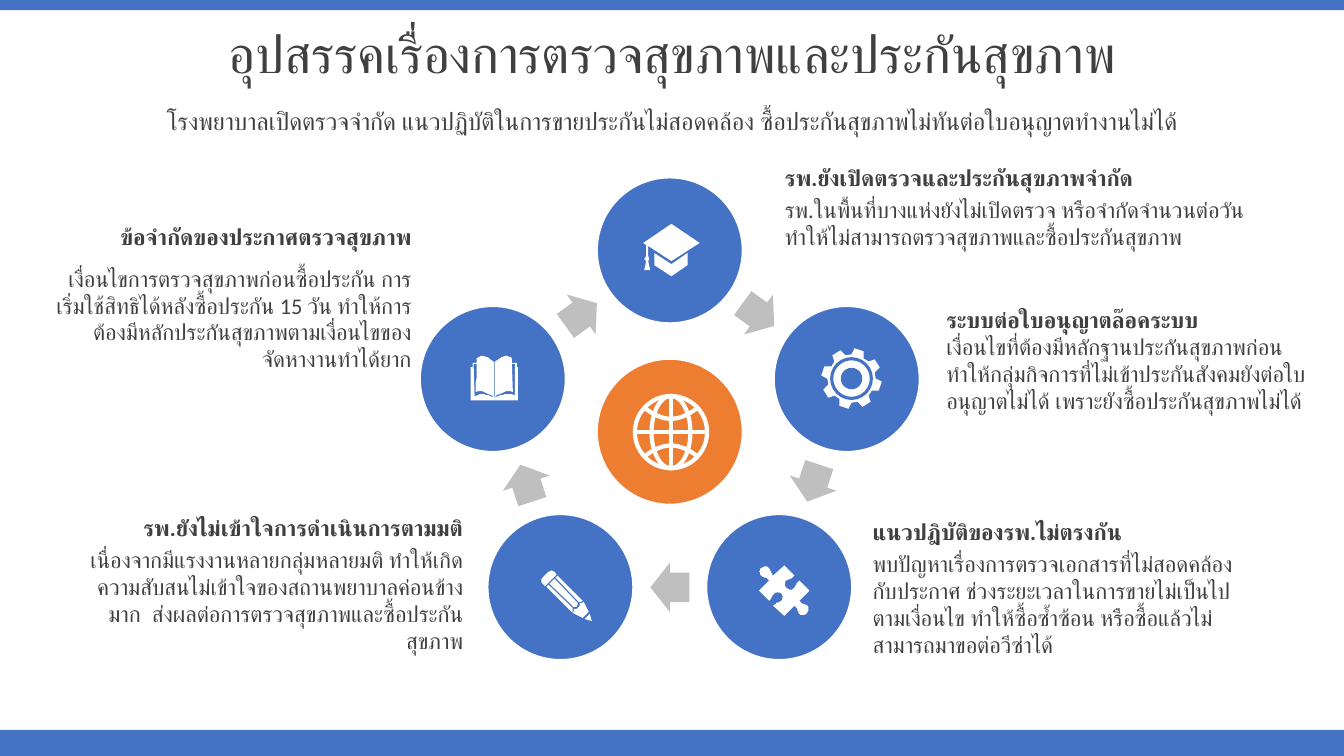
from dataclasses import dataclass
from math import cos, radians, sin

from lxml import etree
from pptx import Presentation
from pptx.dml.color import RGBColor
from pptx.enum.shapes import MSO_CONNECTOR, MSO_SHAPE
from pptx.enum.text import MSO_ANCHOR, MSO_AUTO_SIZE, PP_ALIGN
from pptx.oxml.ns import qn
from pptx.util import Cm, Pt

RECTANGLE, OVAL, ARROW = MSO_SHAPE.RECTANGLE, MSO_SHAPE.OVAL, MSO_SHAPE.RIGHT_ARROW
STRAIGHT = MSO_CONNECTOR.STRAIGHT
LEFT, CENTER, RIGHT = PP_ALIGN.LEFT, PP_ALIGN.CENTER, PP_ALIGN.RIGHT
TOP, MIDDLE = MSO_ANCHOR.TOP, MSO_ANCHOR.MIDDLE
NO_FIT = MSO_AUTO_SIZE.NONE
TITLE_ONLY = 5
WIDTH, HEIGHT = 33.87, 19.05
GRID = Cm(2.54) / 100  # one unit of the icon outlines


@dataclass(frozen=True)
class Theme:
    font: str = "Calibri"
    blue: RGBColor = RGBColor(0x44, 0x72, 0xC4)
    orange: RGBColor = RGBColor(0xED, 0x7D, 0x31)
    grey: RGBColor = RGBColor(0xBF, 0xBF, 0xBF)
    ink: RGBColor = RGBColor(0x40, 0x40, 0x40)
    white: RGBColor = RGBColor(0xFF, 0xFF, 0xFF)
    title: float = 37.2
    subtitle: float = 17.3
    body: float = 16


# Outlines: a pair is a corner, six numbers are a Bézier curve.
BOOK = [[
    (24, 41), (23, 41), (15, 38, 12, 37, 4, 40), (3, 8), (6, 8), (6, 17, 5, 27, 5, 36),
    (11, 34, 17, 36, 23, 41), (23, 6), (19, 3, 16, 0, 12, 0), (10, 0, 8, 1, 6, 2),
    (6, 3, 6, 5, 6, 7), (2, 7), (2, 11), (0, 11), (0, 44), (47, 44), (47, 11), (46, 11),
    (46, 7), (41, 7), (41, 5, 41, 3, 41, 2), (39, 1, 37, 0, 35, 0), (31, 0, 28, 3, 24, 6),
    (24, 41), (30, 36, 36, 34, 42, 36), (41, 8), (44, 8), (44, 39), (36, 36, 31, 39, 24, 41)]]
PUZZLE = [[
    (2, 3), (0, 4, 0, 7, 2, 10), (4, 13, 7, 11, 10, 15), (0, 25), (10, 35),
    (13, 33, 12, 30, 15, 28), (17, 26, 20, 26, 22, 28), (24, 29, 24, 33, 22, 35),
    (19, 38, 18, 36, 14, 40), (25, 50), (35, 40), (39, 43, 37, 44, 40, 48),
    (42, 50, 46, 49, 47, 48), (49, 46, 50, 43, 48, 40), (45, 37, 42, 39, 40, 35),
    (50, 25), (40, 15), (36, 17, 37, 20, 34, 23), (32, 25, 29, 24, 27, 22),
    (26, 21, 25, 17, 27, 15), (31, 12, 32, 14, 35, 10), (25, 0), (14, 10),
    (11, 7, 13, 6, 10, 3), (7, 0, 4, 1, 2, 3)]]
CAP = [
    [(44, 29), (28, 40), (11, 29), (11, 41), (28, 52), (44, 41)],
    [(28, 0), (0, 19), (3, 21), (3, 32), (1, 35), (3, 37), (1, 46), (7, 46), (5, 37),
     (6, 35), (5, 32), (5, 22), (28, 37), (56, 19)]]
PENCIL = [
    [(47, 43), (42, 48), (49, 50)],
    [(41, 31), (39, 32, 38, 33, 37, 32), (37, 34, 37, 35, 35, 37),
     (34, 38, 32, 38, 31, 38), (32, 39, 31, 40, 30, 42), (40, 47), (46, 41)],
    [(6, 14), (4, 16), (29, 41), (30, 40, 30, 37, 29, 36)],
    [(12, 8), (7, 13), (30, 35), (31, 37, 33, 37, 34, 35), (35, 34, 35, 32, 34, 31)],
    [(15, 5), (13, 7), (35, 30), (36, 31, 38, 31, 40, 30)],
    [(9, 0), (8, 0, 7, 1, 6, 1), (0, 7), (-1, 9, -1, 11, 0, 13), (1, 14, 2, 15, 3, 15),
     (14, 4), (12, 1), (11, 1, 10, 0, 9, 0)]]
ICONS = [(BOOK, 11.86, 8.97), (PUZZLE, 19.13, 14.25), (CAP, 16.21, 5.64), (PENCIL, 13.67, 14.38)]

# align, left, width, heading top, heading height, body top, body height, heading, body
CALLOUTS = [
    (RIGHT, 1.09, 9.53, 5.49, 1.22, 6.55, 4.09, "ข้อจำกัดของประกาศตรวจสุขภาพ",
     "เงื่อนไขการตรวจสุขภาพก่อนซื้อประกัน การเริ่มใช้สิทธิได้หลังซื้อประกัน 15 วัน "
     "ทำให้การต้องมีหลักประกันสุขภาพตามเงื่อนไขของจัดหางานทำได้ยาก"),
    (LEFT, 19.53, 12.52, 4.01, 1.22, 4.83, 2.16, "รพ.ยังเปิดตรวจและประกันสุขภาพจำกัด",
     "รพ.ในพื้นที่บางแห่งยังไม่เปิดตรวจ หรือจำกัดจำนวนต่อวัน "
     "ทำให้ไม่สามารถตรวจสุขภาพและซื้อประกันสุขภาพ"),
    (LEFT, 23.6, 9.75, 7.59, 1.07, 8.28, 4.45, "ระบบต่อใบอนุญาตล๊อคระบบ",
     "เงื่อนไขที่ต้องมีหลักฐานประกันสุขภาพก่อน "
     "ทำให้กลุ่มกิจการที่ไม่เข้าประกันสังคมยังต่อใบอนุญาตไม่ได้ เพราะยังซื้อประกันสุขภาพไม่ได้"),
    (LEFT, 21.74, 10.11, 12.93, 1.22, 13.74, 4.09, "แนวปฎิบัติของรพ.ไม่ตรงกัน",
     "พบปัญหาเรื่องการตรวจเอกสารที่ไม่สอดคล้องกับประกาศ ช่วงระยะเวลาในการขายไม่เป็นไปตามเงื่อนไข "
     "ทำให้ซื้อซ้ำซ้อน หรือซื้อแล้วไม่สามารถมาขอต่อวีซ่าได้"),
    (RIGHT, 1.73, 10.19, 12.83, 1.22, 13.64, 4.09, "รพ.ยังไม่เข้าใจการดำเนินการตามมติ",
     "เนื่องจากมีแรงงานหลายกลุ่มหลายมติ ทำให้เกิดความสับสนไม่เข้าใจของสถานพยาบาลค่อนข้างมาก  "
     "ส่งผลต่อการตรวจสุขภาพและซื้อประกันสุขภาพ"),
]


def flatten(outline, steps=8):
    """Turn corners and curves into a list of points."""
    points = [outline[0]]
    for piece in outline[1:]:
        if len(piece) == 2:
            points.append(piece)
            continue
        controls = (points[-1], piece[:2], piece[2:4], piece[4:])
        for step in range(1, steps + 1):
            t = step / steps
            weights = ((1 - t) ** 3, 3 * t * (1 - t) ** 2, 3 * t * t * (1 - t), t ** 3)
            points.append(tuple(sum(w * c[axis] for w, c in zip(weights, controls))
                                for axis in (0, 1)))
    return points


def polar(radius, degrees):
    """Offset at a clockwise angle from straight up."""
    return radius * sin(radians(degrees)), -radius * cos(radians(degrees))


def write(box, text, *, theme, size, align=LEFT, anchor=TOP, bold=False, spacing=None, before=0):
    frame = box.text_frame
    frame.word_wrap, frame.auto_size, frame.vertical_anchor = True, NO_FIT, anchor
    para = frame.paragraphs[0]
    para.alignment, para.line_spacing, para.space_before = align, spacing, Pt(before)
    span = para.add_run()
    span.text = text
    font = span.font
    font.name, font.size, font.bold = theme.font, Pt(size), bold
    font.color.rgb = theme.ink


class Canvas:
    def __init__(self, slide, theme):
        self.slide, self.shapes, self.theme = slide, slide.shapes, theme

    def paint(self, shape, fill=None, line=None, weight=1):
        shape.shadow.inherit = False
        for target, color in ((shape.fill, fill), (shape.line.fill, line)):
            if color is None:
                target.background()
            else:
                target.solid()
                target.fore_color.rgb = color
        if line is not None:
            shape.line.width = Pt(weight)
        return shape

    def shape(self, kind, left, top, width, height, **look):
        return self.paint(self.shapes.add_shape(kind, Cm(left), Cm(top), Cm(width), Cm(height)), **look)

    def oval(self, x, y, radius_x, radius_y=None, **look):
        radius_y = radius_y or radius_x
        return self.shape(OVAL, x - radius_x, y - radius_y, 2 * radius_x, 2 * radius_y, **look)

    def outline(self, contours, x, y, close=True, **look):
        first, *others = [flatten(contour) for contour in contours]
        builder = self.shapes.build_freeform(*first[0], scale=GRID)
        builder.add_line_segments(first[1:], close=close)
        for points in others:
            builder.move_to(*points[0])
            builder.add_line_segments(points[1:], close=close)
        return self.paint(builder.convert_to_shape(Cm(x), Cm(y)), **look)

    def line(self, x1, y1, x2, y2, color, weight):
        line = self.shapes.add_connector(STRAIGHT, Cm(x1), Cm(y1), Cm(x2), Cm(y2))
        line.line.color.rgb, line.line.width = color, Pt(weight)
        etree.SubElement(line._element.spPr, qn("a:effectLst"))

    def text(self, text, left, top, width, height, box=None, **style):
        box = box or self.shapes.add_textbox(0, 0, 0, 0)
        box.left, box.top, box.width, box.height = Cm(left), Cm(top), Cm(width), Cm(height)
        write(box, text, theme=self.theme, **style)

    def gear(self, x, y):
        white, blue = self.theme.white, self.theme.blue
        teeth = [polar(radius, 15 + 45 * tooth + turn) for tooth in range(8)
                 for radius, turn in ((23.5, -15), (30, -9), (30, 9), (23.5, 15))]
        self.outline([teeth], x, y, fill=white)
        self.oval(x, y, 0.5, line=blue, weight=2.2)
        self.oval(x, y, 0.27, fill=blue)

    def globe(self, x, y):
        ink = {"line": self.theme.white, "weight": 3}
        radius = 0.91
        self.oval(x, y, radius, **ink)
        self.oval(x, y, 0.49, radius, **ink)
        self.line(x - radius, y, x + radius, y, self.theme.white, 3)
        self.line(x, y - radius, x, y + radius, self.theme.white, 3)
        for side in (-1, 1):
            latitude = [(-25, 23 * side), (-10, 10 * side, 10, 10 * side, 25, 23 * side)]
            self.outline([latitude], x, y, close=False, **ink)


def main():
    theme = Theme()
    deck = Presentation()
    deck.slide_width, deck.slide_height = Cm(WIDTH), Cm(HEIGHT)
    canvas = Canvas(deck.slides.add_slide(deck.slide_layouts[TITLE_ONLY]), theme)

    for top, height in ((18.39, 0.66), (0, 0.26)):
        canvas.shape(RECTANGLE, 0, top, WIDTH, height, fill=theme.blue)
    banner = {"align": CENTER, "anchor": MIDDLE, "spacing": 0.7, "before": 10}
    canvas.text("อุปสรรคเรื่องการตรวจสุขภาพและประกันสุขภาพ", 0, 0.46, WIDTH, 2.13,
                box=canvas.shapes.title, size=theme.title, **banner)
    canvas.text("โรงพยาบาลเปิดตรวจจำกัด แนวปฏิบัติในการขายประกันไม่สอดคล้อง "
                "ซื้อประกันสุขภาพไม่ทันต่อใบอนุญาตทำงานไม่ได้", 0, 2.59, WIDTH, 1.07,
                size=theme.subtitle, **banner)

    center_x, center_y, disc = 16.88, 11, 1.83
    arrow_width, arrow_height = 0.98, 1.24
    for angle in range(0, 360, 72):
        x, y = polar(4.69, angle)
        canvas.oval(center_x + x, center_y + y, disc, fill=theme.blue, line=theme.white)
        x, y = polar(3.8, angle + 36)
        arrow = canvas.shape(ARROW, center_x + x - arrow_width / 2, center_y + y - arrow_height / 2,
                             arrow_width, arrow_height, fill=theme.grey)
        arrow.rotation = angle + 36
        arrow.adjustments[0], arrow.adjustments[1] = 0.6, 0.5
    canvas.oval(center_x, 10.88, disc, fill=theme.orange, line=theme.white)

    for contours, left, top in ICONS:
        canvas.outline(contours, left, top, fill=theme.white)
    canvas.gear(21.46, 9.54)
    canvas.globe(16.91, 10.89)

    for align, left, width, head_top, head_height, body_top, body_height, heading, body in CALLOUTS:
        canvas.text(body, left, body_top, width, body_height, size=theme.body, align=align)
        canvas.text(heading, left, head_top, width, head_height, size=theme.body, align=align, bold=True)
    deck.save("out.pptx")


if __name__ == "__main__":
    main()
